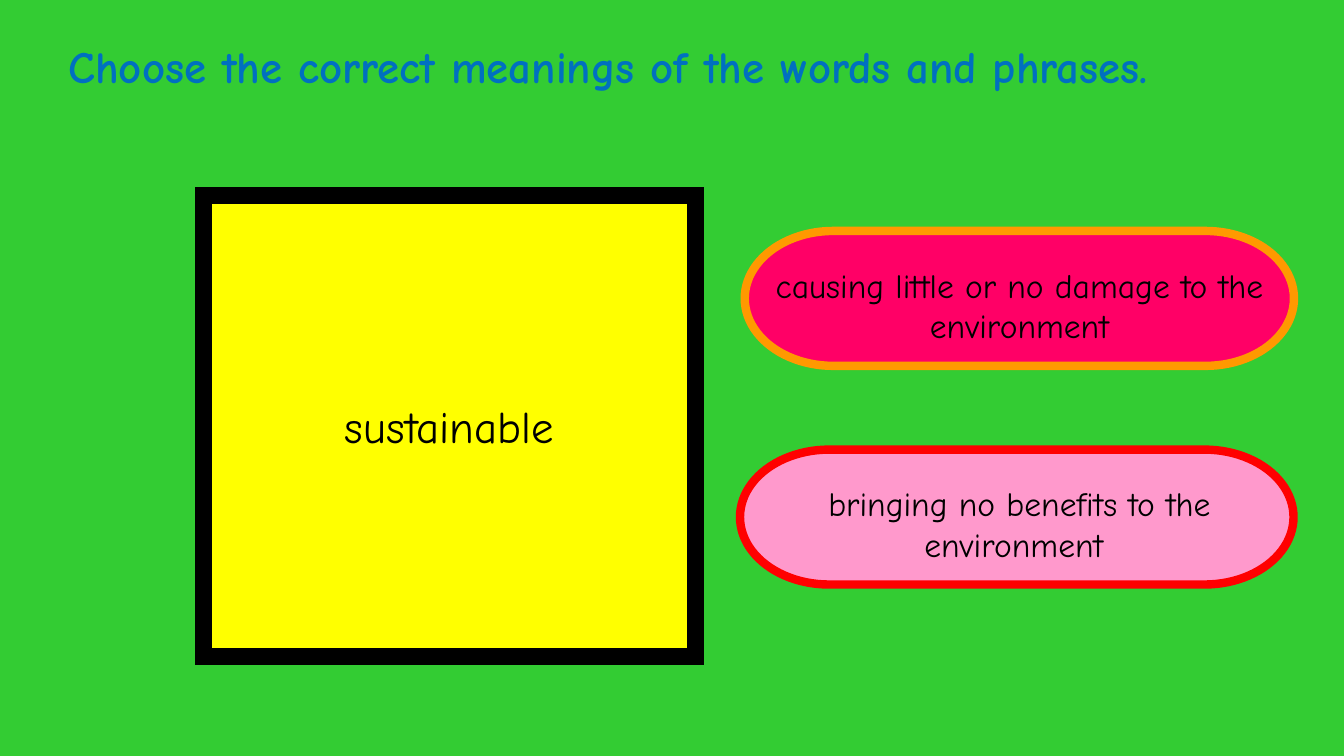
from dataclasses import dataclass

from lxml.etree import SubElement
from pptx import Presentation
from pptx.dml.color import RGBColor
from pptx.enum.shapes import MSO_SHAPE
from pptx.enum.text import MSO_ANCHOR, MSO_AUTO_SIZE, PP_ALIGN
from pptx.oxml.ns import qn
from pptx.util import Cm, Pt


@dataclass(frozen=True)
class Theme:
    """Hold the colours, font and type sizes of the slide."""

    font: str = "Comic Neue"
    back: str = "33CC33"
    head: str = "0070C0"
    ink: str = "000000"
    card: str = "FFFF00"
    large: int = 32
    small: int = 24


THEME = Theme()


def assign(item, values):
    """Set each named value on the item."""
    for name, value in values.items():
        setattr(item, name, value)


def paint(fill, hue):
    """Fill with one solid colour."""
    fill.solid()
    fill.fore_color.rgb = RGBColor.from_string(hue)


def write(frame, text, size, hue=THEME.ink, bold=False,
          align=PP_ALIGN.CENTER, **form):
    """Put one formatted paragraph into a text frame."""
    assign(frame, {"word_wrap": True, "auto_size": MSO_AUTO_SIZE.NONE,
                   "vertical_anchor": MSO_ANCHOR.TOP, **form})
    para = frame.paragraphs[0]
    para.alignment = align
    run = para.add_run()
    run.text = text
    assign(run.font, {"name": THEME.font, "size": Pt(size), "bold": bold})
    run.font.color.rgb = RGBColor.from_string(hue)


def add_form(shapes, kind, box, fill, edge, width):
    """Add a filled shape with a sharp outline."""
    form = shapes.add_shape(kind, *map(Cm, box))
    form.shadow.inherit = False
    paint(form.fill, fill)
    paint(form.line.fill, edge)
    form.line.width = Pt(width)
    SubElement(form.line._get_or_add_ln(), qn("a:miter"), lim="800000")
    return form


def add_title(slide, text):
    """Move the title placeholder and write the task into it."""
    title = slide.shapes.title
    assign(title, {"left": Cm(1.47), "top": Cm(0.84),
                   "width": Cm(32.38), "height": Cm(1.63)})
    write(title.text_frame, text, THEME.large, THEME.head, True,
          PP_ALIGN.LEFT)


def add_card(slide, text):
    """Add the square card with the word to explain."""
    card = add_form(slide.shapes, MSO_SHAPE.RECTANGLE,
                    (5.13, 4.93, 12.4, 11.61), THEME.card, THEME.ink, 12.5)
    write(card.text_frame, text, THEME.large,
          word_wrap=False, vertical_anchor=MSO_ANCHOR.MIDDLE)


def add_choice(slide, text, left, top, width, fill, edge):
    """Add a rounded answer grouped with its text."""
    group = slide.shapes.add_group_shape()
    add_form(group.shapes, MSO_SHAPE.FLOWCHART_TERMINATOR,
             (left, top, width, 3.4), fill, edge, 6)
    label = group.shapes.add_textbox(Cm(19.2), Cm(top + 0.72),
                                     Cm(12.98), Cm(2.31))
    write(label.text_frame, text, THEME.small)


def main():
    """Build the word quiz slide and save it."""
    deck = Presentation()
    assign(deck, {"slide_width": Cm(33.87), "slide_height": Cm(19.05)})
    slide = deck.slides.add_slide(deck.slide_layouts[5])
    paint(slide.background.fill, THEME.back)
    add_title(slide, "Choose the correct meanings of the words and phrases.")
    add_card(slide, "sustainable")
    choices = (
        ("causing little or no damage to the environment",
         18.77, 5.82, 13.84, "FF0066", "FF9900"),
        ("bringing no benefits to the environment ",
         18.65, 11.33, 13.95, "FF99CC", "FF0000"),
    )
    for choice in choices:
        add_choice(slide, *choice)
    deck.save("out.pptx")


if __name__ == "__main__":
    main()
